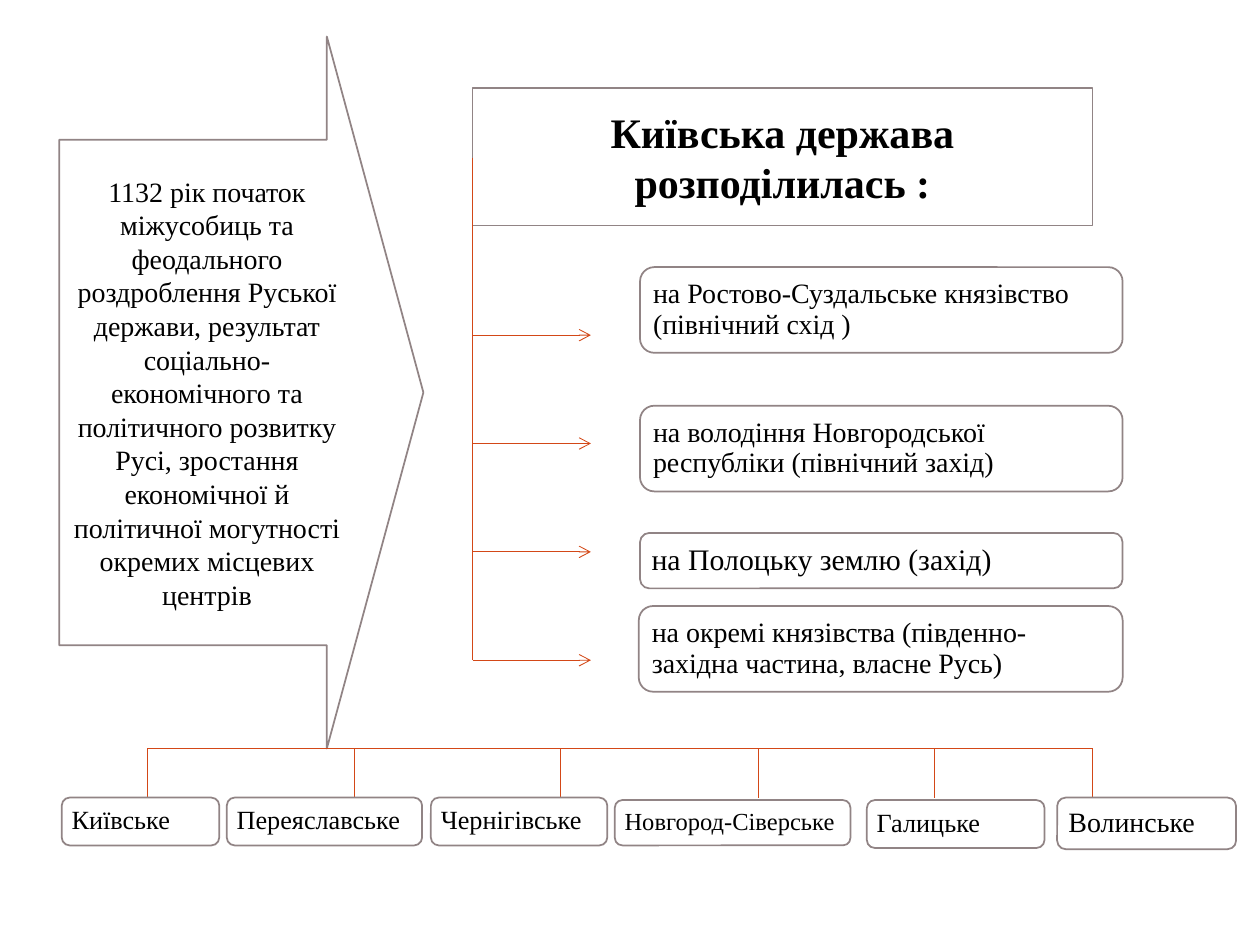
from lxml import etree
from pptx import Presentation
from pptx import util as u
from pptx.dml.color import RGBColor
from pptx.enum import shapes, text
from pptx.oxml.ns import qn

FONT = "Times New Roman"
COLORS = {"fill": "FFFFFF", "border": "918485", "text": "000000", "link": "D34817"}

TITLE = ["Київська держава", "розподілилась :"]
CAUSES = [
    "1132 рік початок",
    "міжусобиць та феодального роздроблення Руської держави, результат "
    "соціально-економічного та політичного розвитку Русі, зростання "
    "економічної й політичної могутності окремих місцевих центрів",
]
# text, left, top, width, height, font size
LANDS = [
    ("на Ростово-Суздальське князівство (північний схід )", 5.08, 2.12, 3.83, 0.68, 16),
    ("на володіння Новгородської республіки (північний захід)", 5.08, 3.22, 3.83, 0.68, 16),
    ("на Полоцьку землю (захід)", 5.08, 4.23, 3.83, 0.44, 17),
    ("на окремі князівства (південно-західна частина, власне Русь)", 5.07, 4.81, 3.84, 0.68, 16),
]
PRINCIPALITIES = [
    ("Київське", 0.49, 6.33, 1.25, 0.38, 15),
    ("Переяславське", 1.8, 6.33, 1.55, 0.38, 15),
    ("Чернігівське", 3.42, 6.33, 1.4, 0.38, 15),
    ("Новгород-Сіверське", 4.88, 6.35, 1.87, 0.36, 14),
    ("Галицьке", 6.88, 6.35, 1.41, 0.38, 15),
    ("Волинське", 8.39, 6.33, 1.42, 0.41, 16),
]
TRUNK_X, TRUNK_TOP = 3.75, 1.25
BRANCH_TOP, BRANCH_STEP, BRANCH_END = 2.66, 0.86, 4.69
BAR_Y, STEM_END = 5.94, 6.33
STEMS = [1.17, 2.81, 4.45, 6.02, 7.42, 8.67]


def rgb(name):
    return RGBColor.from_string(COLORS[name])


def outline(sp):
    sp.fill.solid()
    sp.fill.fore_color.rgb = rgb("fill")
    sp.line.color.rgb = rgb("border")
    sp.line.width = u.Pt(1)


def write(sp, paragraphs, size, align, bold=False, spacing=1.0):
    tf = sp.text_frame
    tf.word_wrap = True
    tf.auto_size = text.MSO_AUTO_SIZE.NONE
    tf.vertical_anchor = text.MSO_ANCHOR.MIDDLE
    for i, words in enumerate(paragraphs):
        p = tf.add_paragraph() if i else tf.paragraphs[0]
        p.alignment = align
        p.line_spacing = spacing
        p.space_before = u.Pt(0)
        r = p.add_run()
        r.text = words
        r.font.name = FONT
        r.font.size = u.Pt(size)
        r.font.bold = bold
        r.font.color.rgb = rgb("text")


def add_shape(s, kind, *box):
    sp = s.shapes.add_shape(kind, *map(u.Inches, box))
    sp.shadow.inherit = False
    outline(sp)
    return sp


def add_label(s, words, left, top, width, height, size):
    sp = add_shape(s, shapes.MSO_SHAPE.ROUNDED_RECTANGLE, left, top, width, height)
    tf = sp.text_frame
    inset = u.Inches(0.07 if size > 15 else 0.06)
    tf.margin_left = tf.margin_right = tf.margin_top = tf.margin_bottom = inset
    write(sp, [words], size, text.PP_ALIGN.LEFT, spacing=0.9)


def add_link(s, x1, y1, x2, y2, arrow=False):
    c = s.shapes.add_connector(
        shapes.MSO_CONNECTOR.STRAIGHT, *map(u.Inches, (x1, y1, x2, y2)))
    c.line.color.rgb = rgb("link")
    c.line.width = u.Pt(0.5)
    if arrow:
        etree.SubElement(c.line._get_or_add_ln(), qn("a:tailEnd"), type="arrow")
    etree.SubElement(c._element.spPr, qn("a:effectLst"))


def add_title(s):
    """Turn the title placeholder into a hexagonal heading."""
    title = s.shapes.title
    title.left, title.top, title.width, title.height = map(
        u.Inches, (3.75, 0.7, 4.92, 1.09))
    geom = etree.SubElement(
        title._element.spPr, qn("a:prstGeom"), prst="flowChartPreparation")
    etree.SubElement(geom, qn("a:avLst"))
    outline(title)
    write(title, TITLE, 24, text.PP_ALIGN.CENTER, bold=True)


def main():
    prs = Presentation()
    prs.slide_width, prs.slide_height = u.Inches(10), u.Inches(7.5)
    s = prs.slides.add_slide(prs.slide_layouts[5])

    add_title(s)
    causes = add_shape(s, shapes.MSO_SHAPE.RIGHT_ARROW, 0.47, 0.29, 2.89, 5.65)
    causes.adjustments[0], causes.adjustments[1] = 0.71, 0.265
    write(causes, CAUSES, 16, text.PP_ALIGN.CENTER)

    branches = [BRANCH_TOP + i * BRANCH_STEP for i in range(len(LANDS))]
    add_link(s, TRUNK_X, TRUNK_TOP, TRUNK_X, branches[-1])
    for y in branches:
        add_link(s, TRUNK_X, y, BRANCH_END, y, arrow=True)

    add_link(s, STEMS[0], BAR_Y, STEMS[-1], BAR_Y)
    for x in STEMS:
        add_link(s, x, BAR_Y, x, STEM_END)

    for label in LANDS + PRINCIPALITIES:
        add_label(s, *label)

    prs.save("out.pptx")


if __name__ == "__main__":
    main()
